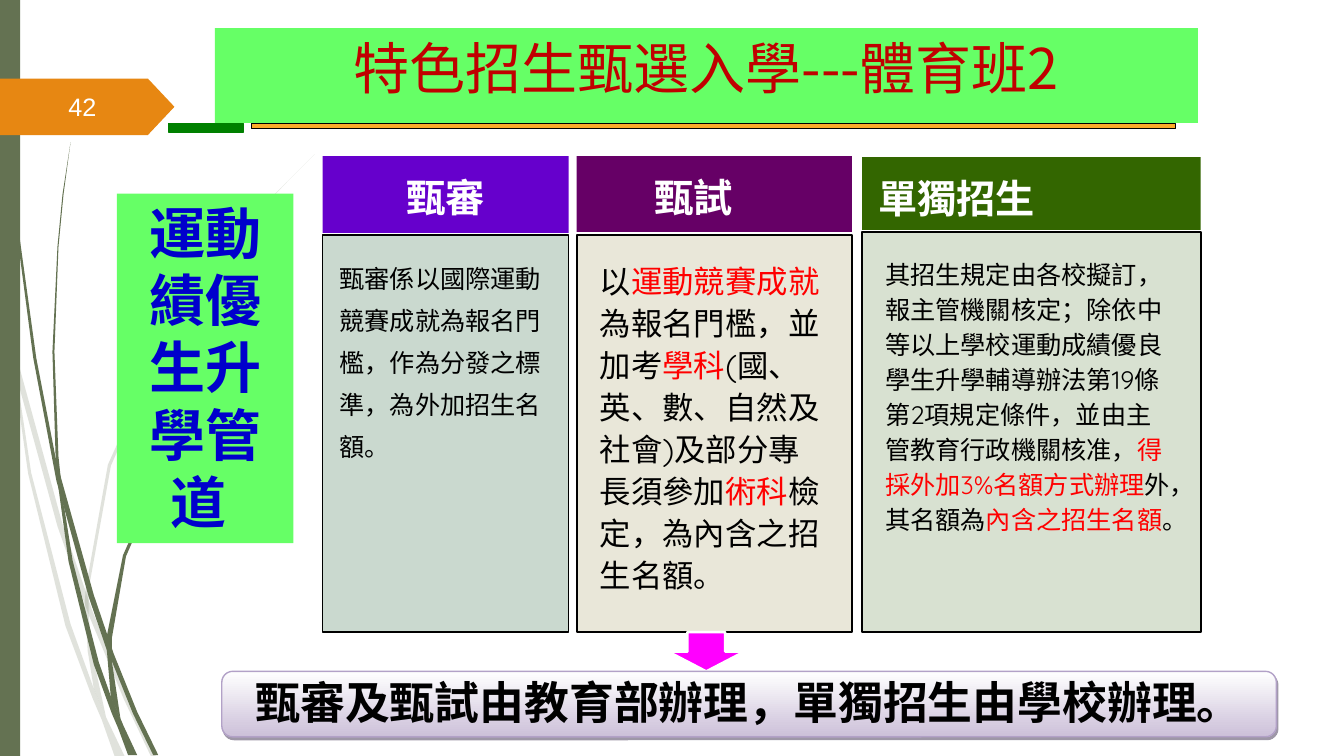
from itertools import cycle
from pptx import Presentation
from pptx.dml.color import RGBColor
from pptx.enum.shapes import MSO_SHAPE
from pptx.enum.text import MSO_ANCHOR, PP_ALIGN
from pptx.oxml.xmlchemy import OxmlElement
from pptx.util import Inches, Pt

COLS, ROWS = 1333, 750
CJK, LATIN = "Noto Sans CJK SC", "Quicksand"
GREEN, OLIVE, WHITE, BLACK, RED = "66FF66", "647252", "FFFFFF", "000000", "FF0000"

PALE_WISPS = [
    [(0, 299), (10, 344), (17, 376), (57, 522), (84, 599), (88, 610), (123, 694), (150, 751),
     (155, 751), (127, 692), (92, 607), (62, 520), (14, 345), (8, 322), (0, 282)],
    [(11, 350), (28, 470), (65, 621), (92, 693), (101, 714), (114, 751), (124, 751), (105, 711),
     (93, 683), (70, 619), (31, 469), (17, 376)],
    [(312, 153), (268, 197), (228, 244), (158, 348), (107, 461), (85, 584), (84, 599), (87, 646),
     (93, 683), (105, 711), (104, 706), (91, 646), (88, 610), (88, 584), (110, 462), (160, 349),
     (229, 245), (268, 198), (290, 175)],
]
DARK_WISPS = [
    [(3, 0), (3, 48), (7, 110), (17, 233), (33, 355), (56, 477), (64, 505), (88, 592), (106, 645),
     (111, 656), (132, 708), (152, 749), (157, 749), (136, 706), (113, 649), (93, 590), (60, 472),
     (55, 453), (36, 355), (19, 232), (8, 109), (5, 48)],
    [(57, 477), (68, 557), (93, 659), (111, 708), (117, 722), (127, 749), (136, 749), (122, 719),
     (110, 691), (98, 657), (72, 556), (64, 505)],
    [(70, 141), (62, 193), (57, 245), (52, 349), (55, 449), (57, 477), (64, 505), (60, 472),
     (58, 453), (54, 349), (58, 245), (63, 193)],
    [(260, 344), (245, 358), (231, 373), (204, 405), (156, 474), (122, 551), (106, 631),
     (106, 645), (110, 692), (122, 719), (120, 716), (111, 656), (111, 633), (125, 552),
     (158, 476), (205, 406), (231, 374), (246, 359)],
]
CARDS = [
    dict(x=320, w=244, head=(155, 76, "6600CC"), title="甄審", label=None,
         body=(233, 394, "C5D5CA"), size=18, spacing=30, insets=(12, 12, 16.5, 18),
         runs=["甄審係以國際運動競賽成就為報名門檻，作為分發之標準，為外加招生名額。"]),
    dict(x=572, w=273, head=(155, 75, "660066"), title="甄試", label=(567, 162, 241, 62),
         body=(233, 394, "E7E5D5"), size=22.4, spacing=30, insets=(16.5, 16.5, 21.5, 24.5),
         runs=["以", "運動競賽成就", "為報名門檻，並加考", "學科",
               "(國、英、數、自然及社會)及部分專長須參加", "術科", "檢定，為內含之招生名額。"]),
    dict(x=855, w=336, head=(156, 72, "336600"), title="單獨招生", label=(824, 163, 249, 62),
         body=(230, 397, "D4DECD"), size=18, spacing=25, insets=(16.5, 16.5, 21.5, 24.5),
         runs=["其招生規定由各校擬訂，報主管機關核定；除依中等以上學校運動成績優良"
               "學生升學輔導辦法第19條第2項規定條件，並由主管教育行政機關核准，",
               "得採外加3%名額方式辦理", "外，其名額為", "內含之招生名額", "。"]),
]


def rgb(value):
    return RGBColor.from_string(value)


def child(parent, tag, **attrs):
    el = OxmlElement(tag)
    for name, value in attrs.items():
        el.set(name, str(value))
    parent.append(el)
    return el


def write(sp, *texts, size=18, color=BLACK, accent=RED, font=CJK, bold=False, align=PP_ALIGN.CENTER,
          anchor=MSO_ANCHOR.TOP, spacing=None, insets=(7.2, 3.6, 7.2, 3.6)):
    tf = sp.text_frame
    tf.word_wrap = True
    tf.vertical_anchor = anchor
    tf.margin_left, tf.margin_top, tf.margin_right, tf.margin_bottom = map(Pt, insets)
    p = tf.paragraphs[0]
    p.alignment = align
    if spacing:
        p.line_spacing = Pt(spacing)
    for text, tint in zip(texts, cycle([color, accent])):
        r = p.add_run()
        r.text = text
        r.font.size, r.font.bold, r.font.name = Pt(size), bold, font
        r.font.color.rgb = rgb(tint)
        child(r._r.get_or_add_rPr(), "a:ea", typeface=CJK)


class Deck:
    """Holds the grid, the presentation and the current slide."""

    def __init__(self):
        self.prs = Presentation()
        self.prs.slide_width, self.prs.slide_height = Inches(13.33), Inches(7.5)
        self.col = self.prs.slide_width / COLS
        self.row = self.prs.slide_height / ROWS
        self.s = self.prs.slides.add_slide(self.prs.slide_layouts[6])

    def place(self, x, y, w, h):
        return [round(n * unit) for n, unit in zip((x, y, w, h), (self.col, self.row) * 2)]

    def paint(self, sp, fill, line=None, width=0.75, alpha=None):
        sp.shadow.inherit = False
        sp.fill.solid()
        sp.fill.fore_color.rgb = rgb(fill)
        if alpha:
            color = sp._element.spPr.find(".//{*}solidFill/{*}srgbClr")
            child(color, "a:alpha", val=alpha * 1000)
        if line:
            sp.line.color.rgb = rgb(line)
            sp.line.width = Pt(width)
        else:
            sp.line.fill.background()
        return sp

    def shape(self, box, fill, kind=MSO_SHAPE.RECTANGLE, **style):
        sp = self.s.shapes.add_shape(kind, *self.place(*box))
        return self.paint(sp, fill, **style)

    def label(self, box, text, **style):
        write(self.s.shapes.add_textbox(*self.place(*box)), text, **style)

    def wisp(self, points, alpha=None):
        builder = self.s.shapes.build_freeform(*points[0], scale=(self.col, self.row))
        builder.add_line_segments(points[1:], close=True)
        self.paint(builder.convert_to_shape(), OLIVE, alpha=alpha)

    def card(self, x, w, head, title, label, body, size, spacing, insets, runs):
        top, height, color = head
        heading = dict(size=28, color=WHITE, bold=True, spacing=37)
        sp = self.shape((x, top, w, height), color)
        if label:
            self.label(label, title, **heading)
        else:
            write(sp, title, anchor=MSO_ANCHOR.MIDDLE, **heading)
        top, height, color = body
        sp = self.shape((x, top, w, height), color, line=BLACK, width=1.25, alpha=90)
        write(sp, *runs, size=size, font=LATIN, align=PP_ALIGN.LEFT, spacing=spacing, insets=insets)

    def banner(self, box, text):
        sp = self.shape(box, WHITE, MSO_SHAPE.ROUNDED_RECTANGLE, line="B2A1C7", width=1)
        sp.fill.gradient()
        sp.fill.gradient_angle = 270
        for stop, color in zip(sp.fill.gradient_stops, (WHITE, "CCC0D9")):
            stop.color.rgb = rgb(color)
        effects = sp._element.spPr.find("{*}effectLst")
        shadow = child(effects, "a:outerShdw", blurRad=0, dist=Pt(2.2), dir=63 * 60000, rotWithShape=0)
        child(child(shadow, "a:srgbClr", val="3F3151"), "a:alpha", val=50000)
        write(sp, text, size=32, bold=True, spacing=35)


def main():
    deck = Deck()
    for points in PALE_WISPS:
        deck.wisp(points, alpha=20)
    for points in DARK_WISPS:
        deck.wisp(points)
    deck.shape((0, 0, 20, ROWS), OLIVE)
    tag = deck.shape((-1, 78, 174, 56), "E78712", MSO_SHAPE.PENTAGON)
    tag.adjustments[0] = 0.47
    deck.shape((167, 123, 75, 8), "008000", line="008000")
    deck.shape((249, 123, 917, 5), "FDAB2A", line=BLACK)
    for card in CARDS:
        deck.card(**card)
    side = deck.shape((116, 192, 175, 347), GREEN)
    write(side, "運動績優生升學管道 ", size=40, color="0000CC", bold=True, spacing=48)
    deck.shape((663, 627, 75, 39), "FF00FF", MSO_SHAPE.DOWN_ARROW, line=WHITE, width=1.75)
    deck.banner((220, 666, 1046, 65), "甄審及甄試由教育部辦理，單獨招生由學校辦理。")
    title = deck.shape((213, 28, 975, 94), GREEN)
    write(title, "特色招生甄選入學---體育班2", size=40, color="C00000", spacing=48)
    deck.label((58, 86, 85, 40), "42", color=WHITE, font="Arial", align=PP_ALIGN.LEFT,
               anchor=MSO_ANCHOR.MIDDLE)
    deck.prs.save("out.pptx")


if __name__ == "__main__":
    main()
